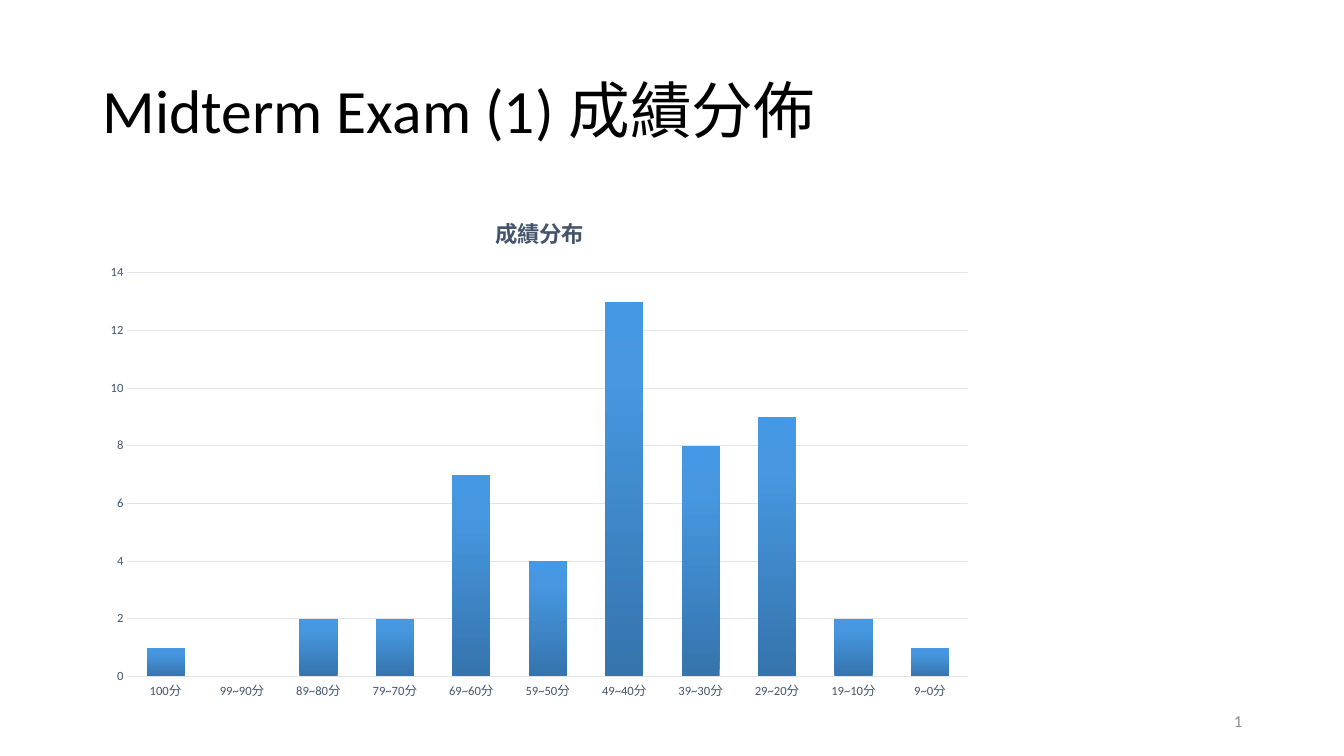
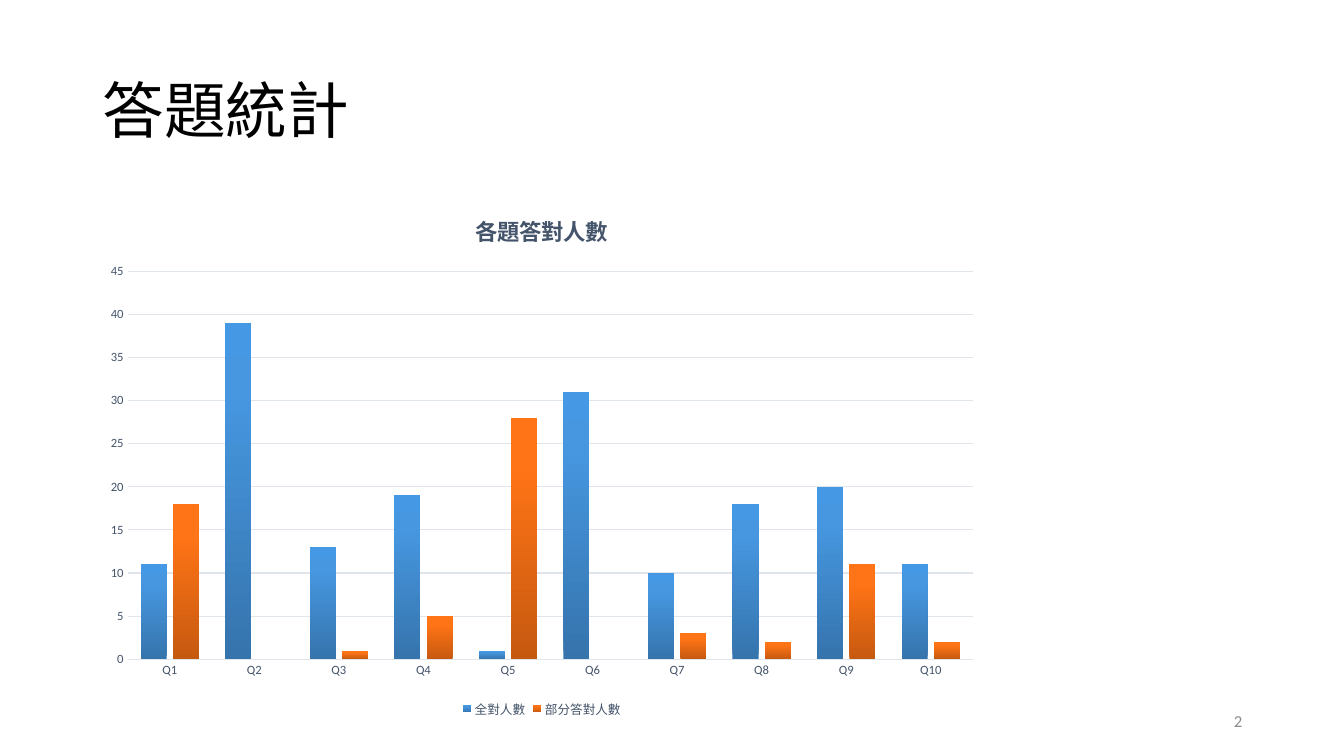
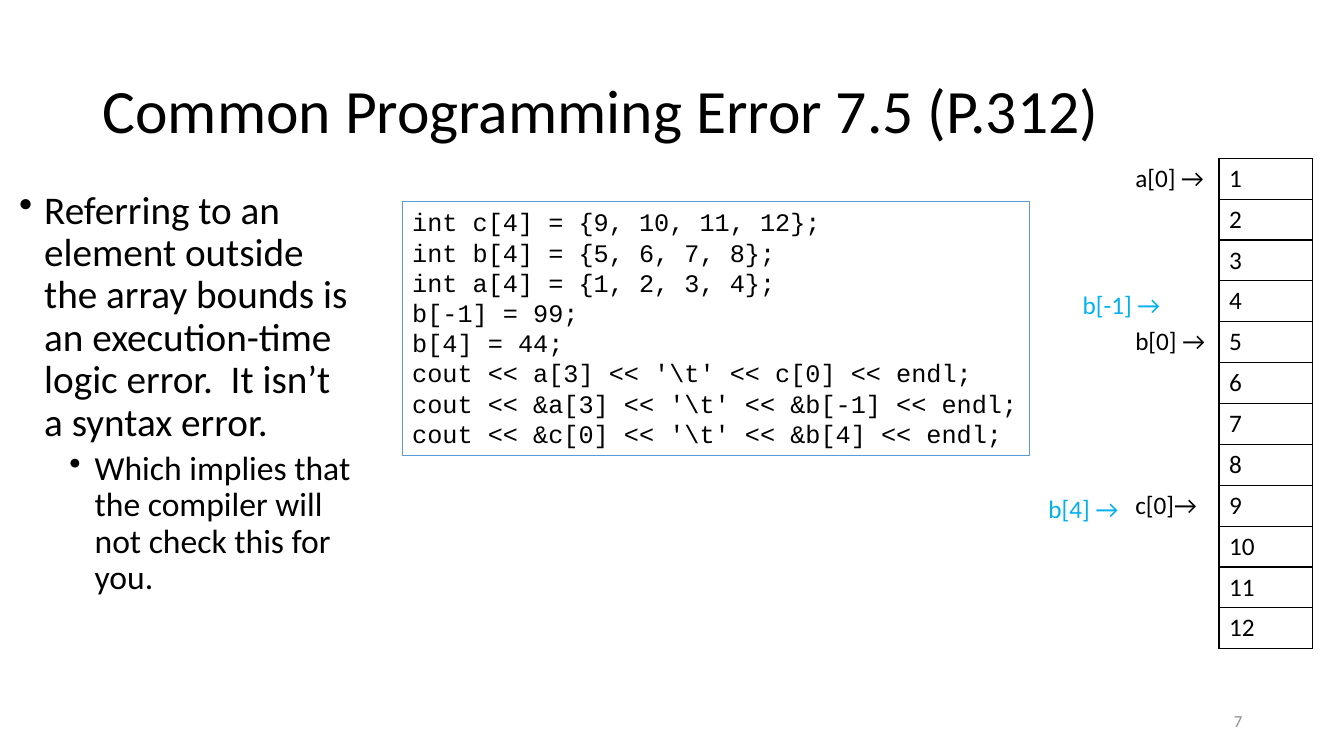
from dataclasses import dataclass
from typing import Optional

from lxml import etree
from pptx import Presentation
from pptx import util as u
from pptx.chart import data as cd
from pptx.dml.color import RGBColor
from pptx.enum import chart as ce, shapes, text
from pptx.oxml import parse_xml
from pptx.oxml.ns import nsdecls, qn

HUE = {
    "ink": "000000", "white": "FFFFFF", "gray": "8C8C8C", "slate": "44546A",
    "grid": "E0E5EB", "frame": "5B9BD5", "cyan": "00B0F0",
}
BLUE = ((0, "3674AD"), (80, "4697E0"), (100, "4498E4"))
AMBER = ((0, "C65910"), (80, "FF7416"), (100, "FF7517"))
FACE = "Calibri"
MONO = "Courier New"

Box = tuple[int, int, int, int]


@dataclass
class Bar:
    name: str
    vals: tuple
    stops: tuple


@dataclass
class Plot:
    box: Box
    title: str
    cats: tuple
    bars: tuple
    top: int
    step: int
    legend: bool = False


@dataclass
class Point:
    words: str
    size: int
    left: int
    before: int


@dataclass
class Tag:
    words: str
    box: Box


def px(n: int) -> int:
    return n * 9144


def rgb(key: str) -> RGBColor:
    return RGBColor.from_string(HUE[key])


def style(font, size: int, hue: str = "ink", face: str = FACE) -> None:
    font.name = face
    font.size = u.Pt(size)
    font.color.rgb = rgb(hue)


def stroke(line, hue: str) -> None:
    line.color.rgb = rgb(hue)
    line.width = u.Pt(0.75)


def write(slide, box: Box, words: str, size: int, hue: str = "ink"):
    area = slide.shapes.add_textbox(*map(px, box))
    frame = area.text_frame
    frame.word_wrap = True
    frame.text = words
    para = frame.paragraphs[0]
    style(para.font, size, hue)
    return frame, para


def start(deck, title: str, page: str):
    slide = deck.slides.add_slide(deck.slide_layouts[6])
    frame, para = write(slide, (92, 40, 1150, 145), title, 44)
    frame.vertical_anchor = text.MSO_ANCHOR.MIDDLE
    para.line_spacing = 0.9
    frame, para = write(slide, (942, 695, 300, 40), page, 12, "gray")
    frame.vertical_anchor = text.MSO_ANCHOR.MIDDLE
    para.alignment = text.PP_ALIGN.RIGHT
    return slide


def shade(bar, stops: tuple) -> None:
    marks = "".join(
        f'<a:gs pos="{at * 1000}"><a:srgbClr val="{tone}"/></a:gs>' for at, tone in stops
    )
    bar.format.fill.background()
    props = bar.format._element.get_or_add_spPr() if hasattr(bar.format, "_element") else bar._element.get_or_add_spPr()
    old = props.find(qn("a:noFill"))
    props.replace(old, parse_xml(
        f'<a:gradFill {nsdecls("a")}><a:gsLst>{marks}</a:gsLst>'
        '<a:lin ang="16200000" scaled="0"/></a:gradFill>'
    ))


def draw_plot(slide, plot: Plot) -> None:
    data = cd.CategoryChartData()
    data.categories = plot.cats
    for bar in plot.bars:
        data.add_series(bar.name, bar.vals)
    kind = ce.XL_CHART_TYPE.COLUMN_CLUSTERED
    chart = slide.shapes.add_chart(kind, *map(px, plot.box), data).chart
    style(chart.font, 10)

    chart.has_title = True
    frame = chart.chart_title.text_frame
    frame.text = plot.title
    font = frame.paragraphs[0].font
    style(font, 16, "slate")
    font.bold = True

    chart.has_legend = plot.legend
    if plot.legend:
        chart.legend.position = ce.XL_LEGEND_POSITION.BOTTOM
        chart.legend.include_in_layout = False
        style(chart.legend.font, 9, "slate")

    for axis in (chart.category_axis, chart.value_axis):
        axis.major_tick_mark = axis.minor_tick_mark = ce.XL_TICK_MARK.NONE
        style(axis.tick_labels.font, 9, "slate")
    stroke(chart.category_axis.format.line, "grid")
    side = chart.value_axis
    side.format.line.fill.background()
    side.has_major_gridlines = True
    stroke(side.major_gridlines.format.line, "grid")
    side.minimum_scale, side.maximum_scale, side.major_unit = 0, plot.top, plot.step

    group = chart.plots[0]
    group.vary_by_categories = False
    group.gap_width = 100
    group.overlap = -24
    for item, bar in zip(group.series, plot.bars):
        shade(item, bar.stops)


def draw_points(slide, box: Box, points: tuple) -> None:
    frame = slide.shapes.add_textbox(*map(px, box)).text_frame
    frame.word_wrap = True
    for rank, point in enumerate(points):
        para = frame.add_paragraph() if rank else frame.paragraphs[0]
        para.text = point.words
        para.level = rank
        para.line_spacing = 0.9
        para.space_before = u.Pt(point.before)
        style(para.font, point.size)
        props = para._p.get_or_add_pPr()
        props.set("marL", str(px(point.left)))
        props.set("indent", str(px(-25)))
        mark = parse_xml(f'<a:buChar {nsdecls("a")} char="•"/>')
        props.find(qn("a:defRPr")).addprevious(mark)


def draw_code(slide, box: Box, code: str) -> None:
    panel = slide.shapes.add_shape(shapes.MSO_SHAPE.RECTANGLE, *map(px, box))
    panel.shadow.inherit = False
    panel.fill.background()
    stroke(panel.line, "frame")
    frame = panel.text_frame
    frame.word_wrap = True
    frame.auto_size = text.MSO_AUTO_SIZE.SHAPE_TO_FIT_TEXT
    frame.vertical_anchor = text.MSO_ANCHOR.TOP
    frame.text = code
    for para in frame.paragraphs:
        para.alignment = text.PP_ALIGN.LEFT
        style(para.font, 18, face=MONO)


def edge(cell, hues: dict) -> None:
    props = cell._tc.get_or_add_tcPr()
    for rank, (side, hue) in enumerate(hues.items()):
        line = etree.Element(qn(f"a:ln{side}"), w=str(u.Pt(1)))
        fill = etree.SubElement(line, qn("a:solidFill"))
        etree.SubElement(fill, qn("a:srgbClr"), val=HUE[hue])
        props.insert(rank, line)


def draw_cells(slide, box: Box, count: int, heads: dict) -> None:
    table = slide.shapes.add_table(count, 2, *map(px, box)).table
    table.first_row = table.horz_banding = False
    bare = {"L": "white", "R": "ink", "T": "white", "B": "white"}
    full = dict.fromkeys("LRTB", "ink")
    for row in range(count):
        pair = (heads.get(row, ""), bare), (str(row + 1), full)
        for col, (words, hues) in enumerate(pair):
            cell = table.cell(row, col)
            cell.text = words
            cell.fill.background()
            style(cell.text_frame.paragraphs[0].font, 18)
            edge(cell, hues)


SCORES = Plot(
    (92, 193, 886, 510), "成績分布",
    ("100分", "99~90分", "89~80分", "79~70分", "69~60分", "59~50分",
     "49~40分", "39~30分", "29~20分", "19~10分", "9~0分"),
    (Bar("Series 1", (1, 0, 2, 2, 7, 4, 13, 8, 9, 2, 1), BLUE),),
    14, 2,
)
ANSWERS = Plot(
    (92, 191, 891, 525), "各題答對人數",
    tuple(f"Q{n}" for n in range(1, 11)),
    (Bar("全對人數", (11, 39, 13, 19, 1, 31, 10, 18, 20, 11), BLUE),
     Bar("部分答對人數", (18, None, 1, 5, 28, None, 3, 2, 11, 2), AMBER)),
    45, 5, True,
)
POINTS = (
    Point("Referring to an element outside the array bounds is an execution-time "
          "logic error.  It isn’t a syntax error.", 28, 25, 10),
    Point("Which implies that the compiler will not check this for you.", 24, 75, 5),
)
CODE = r"""int c[4] = {9, 10, 11, 12};
int b[4] = {5, 6, 7, 8};
int a[4] = {1, 2, 3, 4};
b[-1] = 99;
b[4] = 44;
cout << a[3] << '\t' << c[0] << endl;
cout << &a[3] << '\t' << &b[-1] << endl;
cout << &c[0] << '\t' << &b[4] << endl;"""
HEADS = {0: "a[0] →", 4: "b[0] →", 8: "c[0]→"}
TAGS = (Tag("b[-1] →", (1064, 282, 105, 40)), Tag("b[4] →", (1030, 484, 105, 40)))


def main() -> None:
    deck = Presentation()
    deck.slide_width, deck.slide_height = u.Inches(13.33), u.Inches(7.5)
    draw_plot(start(deck, "Midterm Exam (1) 成績分佈", "1"), SCORES)
    draw_plot(start(deck, "答題統計", "2"), ANSWERS)
    slide = start(deck, "Common Programming Error 7.5 (P.312)", "7")
    draw_points(slide, (9, 184, 355, 476), POINTS)
    draw_code(slide, (399, 200, 622, 252), CODE)
    draw_cells(slide, (1116, 157, 186, 487), 12, HEADS)
    for tag in TAGS:
        write(slide, tag.box, tag.words, 18, "cyan")
    deck.save("out.pptx")


if __name__ == "__main__":
    main()
